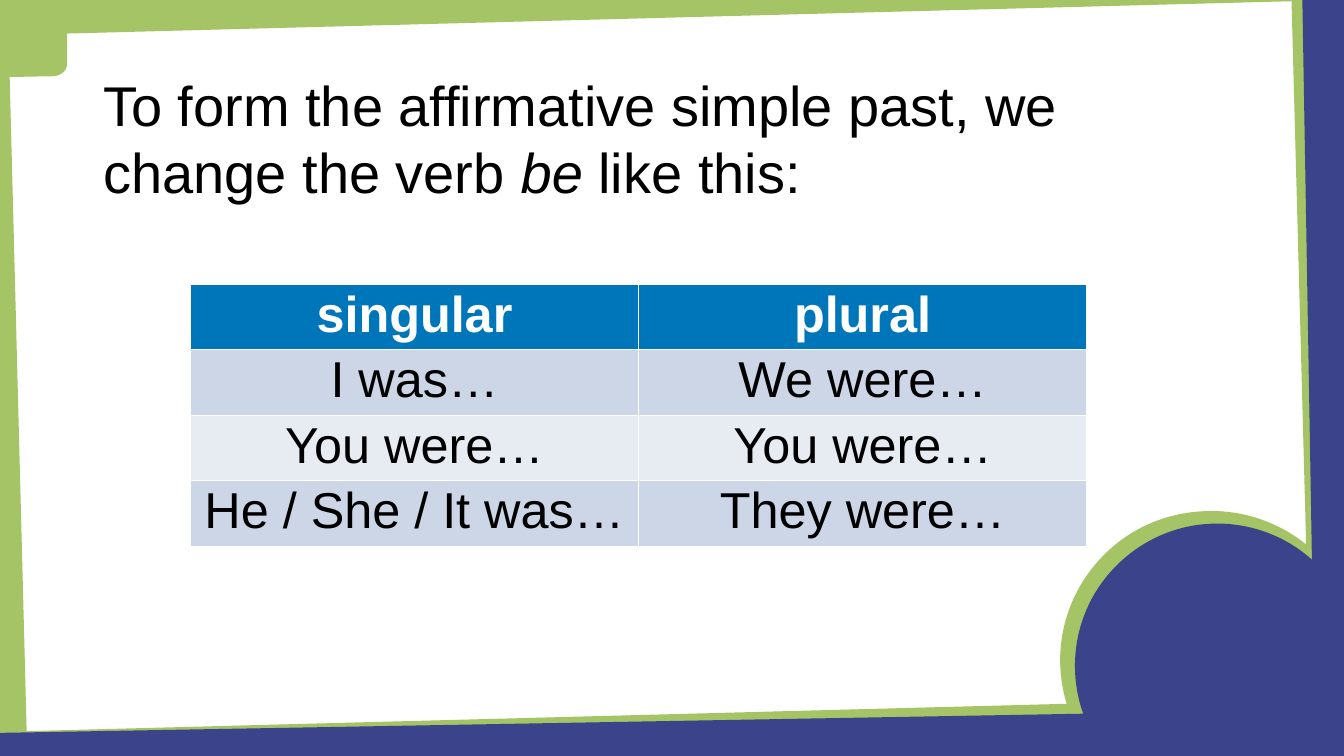
from lxml.etree import Element, SubElement
from pptx import Presentation
from pptx.dml.color import RGBColor
from pptx.enum.text import MSO_ANCHOR, MSO_AUTO_SIZE, PP_ALIGN
from pptx.oxml.ns import qn
from pptx.util import Pt

WIDE, HIGH = 1920, 1080
GREEN, NAVY, BLUE = "A5C465", "3B438B", "0076BA"
DARK, LIGHT = "CCD6E7", "E7ECF3"
WHITE, BLACK = "FFFFFF", "000000"


def color(code):
    return RGBColor.from_string(code)


class Deck:
    font = "Arial"

    def __init__(self):
        self.file = Presentation()
        self.file.slide_width, self.file.slide_height = Pt(WIDE), Pt(HIGH)
        self.slide = self.file.slides.add_slide(self.file.slide_layouts[5])

    def style(self, para, size, code, align, bold=False):
        para.alignment = align
        font = para.font
        font.name, font.size, font.bold = self.font, Pt(size), bold
        font.color.rgb = color(code)

    def outline(self, fill, *steps):
        """A step is a corner (x, y) or a curve (two controls and an end)."""
        spots = [(Pt(step[-2]), Pt(step[-1])) for step in steps]
        pen = self.slide.shapes.build_freeform(*spots[0])
        pen.add_line_segments(spots[1:], close=True)
        shape = pen.convert_to_shape()
        self.bend(shape, steps[1:])
        shape.shadow.inherit = False
        shape.fill.solid()
        shape.fill.fore_color.rgb = color(fill)
        shape.line.fill.background()

    def bend(self, shape, steps):
        """Turn the straight pieces that have controls into cubic curves."""
        trail = next(shape._element.iter(qn("a:path")))
        for step, line in zip(steps, trail.findall(qn("a:lnTo"))):
            if len(step) == 2:
                continue
            arc = Element(qn("a:cubicBezTo"))
            for x, y in zip(step[::2], step[1::2]):
                SubElement(arc, qn("a:pt"), x=str(Pt(x) - shape.left),
                           y=str(Pt(y) - shape.top))
            trail.replace(line, arc)

    def title(self, runs, left, top, width, height, size):
        box = self.slide.shapes.title
        box.left, box.top, box.width, box.height = map(
            Pt, (left, top, width, height))
        frame = box.text_frame
        frame.word_wrap = True
        frame.auto_size = MSO_AUTO_SIZE.SHAPE_TO_FIT_TEXT
        frame.vertical_anchor = MSO_ANCHOR.TOP
        para = frame.paragraphs[0]
        self.style(para, size, BLACK, PP_ALIGN.LEFT)
        for text, slant in runs:
            run = para.add_run()
            run.text, run.font.italic = text, slant

    def border(self, cell):
        props = cell._tc.get_or_add_tcPr()
        for side in "LRTB":
            line = SubElement(props, qn("a:ln" + side), w=str(Pt(1)))
            fill = SubElement(line, qn("a:solidFill"))
            SubElement(fill, qn("a:srgbClr"), val=WHITE)

    def table(self, data, left, top, width, row, size):
        grid = self.slide.shapes.add_table(
            len(data), len(data[0]), Pt(left), Pt(top),
            Pt(width), Pt(row * len(data))).table
        for r, texts in enumerate(data):
            head = r == 0
            for c, text in enumerate(texts):
                cell = grid.cell(r, c)
                cell.text = text
                self.style(cell.text_frame.paragraphs[0], size,
                           WHITE if head else BLACK, PP_ALIGN.CENTER, head)
                self.border(cell)
                cell.fill.solid()
                cell.fill.fore_color.rgb = color(
                    BLUE if head else DARK if r % 2 else LIGHT)


def main():
    deck = Deck()

    # Green frame: disc, right edge, corner tab, top, bottom and left edges
    deck.outline(GREEN, (1727, 730), (1671, 731, 1616, 752, 1575, 795),
                 (1536, 835, 1516, 886, 1514.6, 937.5),
                 (1513.3, 989, 1530.5, 1041, 1566, 1080),
                 (1920, 1080), (1919, 840),
                 (1909, 822, 1897, 805, 1880, 790),
                 (1837, 749, 1781, 729, 1727, 730))
    deck.outline(GREEN, (1845, 0), (1874, 1080), (1906, 1080), (1877, 0))
    deck.outline(GREEN, (0, 0), (0, 109), (4, 110, 9, 110, 16, 110), (67, 109),
                 (76, 109, 81, 109, 84, 107), (89, 105, 94, 101, 95, 96),
                 (96, 93, 96, 87, 96, 78), (95, 10), (95, 0))
    deck.outline(GREEN, (0, 0), (0, 50.5), (1912, 0))
    deck.outline(GREEN, (1920, 995), (0, 1045.5), (0, 1071), (1920, 1021))
    deck.outline(GREEN, (0, 0), (0, 1080), (39, 1080), (11, 0))

    # Navy frame: right edge, bottom edge, disc
    deck.outline(NAVY, (1860.5, 0), (1879, 1080), (1920, 1080), (1920, 0))
    deck.outline(NAVY, (1920, 1013), (0, 1047), (0, 1080), (1920, 1080))
    deck.outline(NAVY, (1735, 748), (1683, 749, 1632, 770, 1593, 810),
                 (1556.5, 847.5, 1537.5, 895.5, 1535.8, 943.9),
                 (1534, 992.3, 1549.5, 1041, 1582, 1080), (1900, 1074),
                 (1909, 1063, 1916, 1051, 1920, 1038), (1919, 858),
                 (1909, 840, 1896, 822, 1880, 805),
                 (1840, 766, 1787, 747, 1735, 748))

    # Rule and verb forms
    deck.title([("To form the affirmative simple past, we change the verb ", False),
                ("be", True), (" like this:", False)],
               140.4, 96.5, 1544.4, 200.9, 80)
    deck.table([("singular", "plural"),
                ("I was…", "We were…"),
                ("You were…", "You were…"),
                ("He / She / It was…", "They were…")],
               272.2, 405.7, 1280.2, 93.6, 72)

    deck.file.save("out.pptx")


if __name__ == "__main__":
    main()
